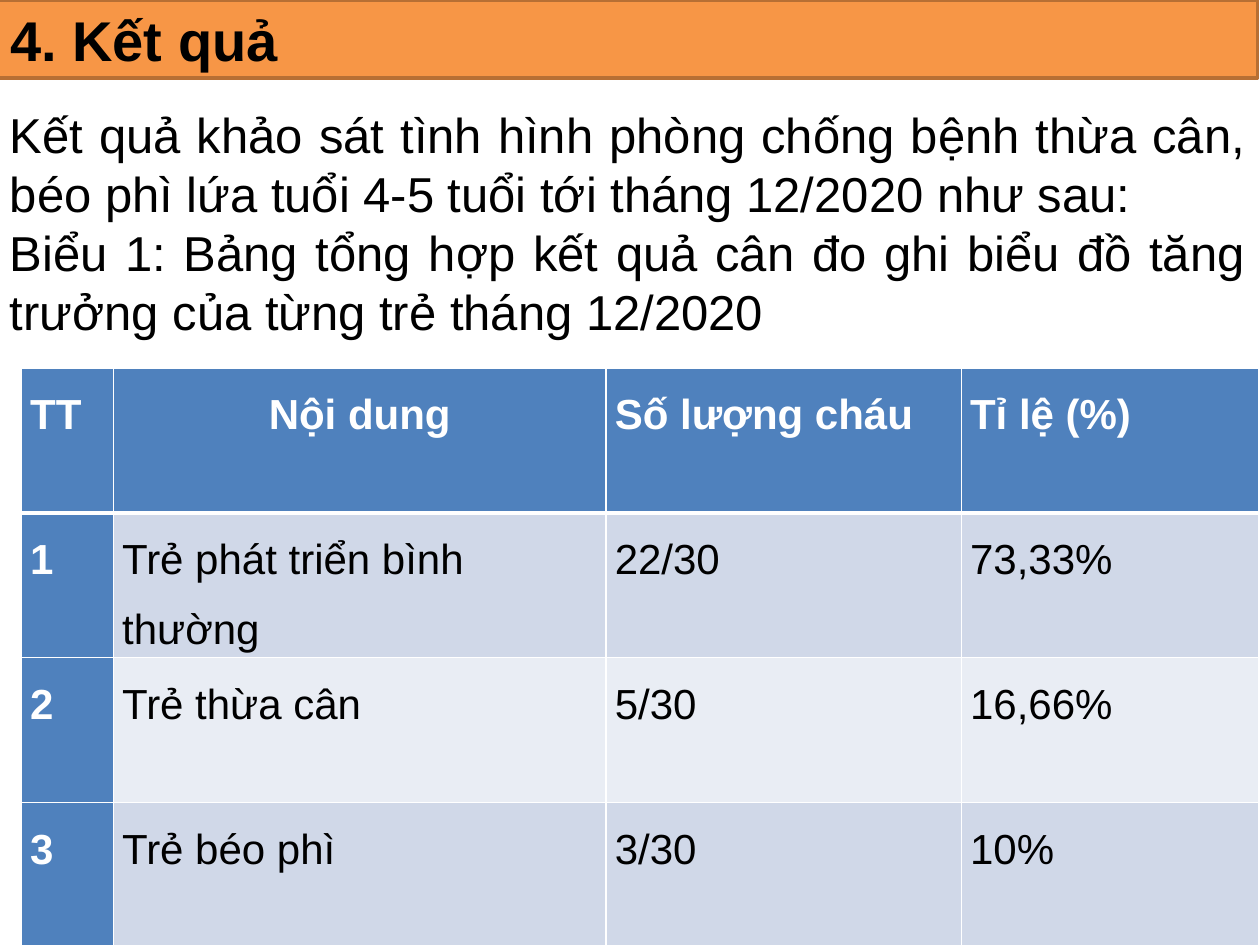
from dataclasses import dataclass

from lxml import etree
from pptx import Presentation, util as u
from pptx.dml.color import RGBColor
from pptx.enum import text
from pptx.oxml import ns

WHITE, BLACK, BLUE = "FFFFFF", "000000", "4F81BD"
BANDS = ("D0D8E8", "E9EDF4")
COLUMN_WIDTHS = (0.73, 3.91, 2.82, 2.36)
ROW_HEIGHT = 1.15
CELL_FORMAT = {"margin_left": u.Inches(0.07), "margin_right": u.Inches(0.07),
               "margin_top": 0, "margin_bottom": 0}


@dataclass
class Result:
    number: str
    content: str
    count: str
    rate: str

    def values(self) -> tuple:
        return self.number, self.content, self.count, self.rate


HEADER = Result("TT", "Nội dung", "Số lượng cháu", "Tỉ lệ (%)")
RESULTS = [
    Result("1", "Trẻ phát triển bình thường", "22/30", "73,33%"),
    Result("2", "Trẻ thừa cân", "5/30", "16,66%"),
    Result("3", "Trẻ béo phì", "3/30", "10%"),
]
INTRO = [
    "Kết quả khảo sát tình hình phòng chống bệnh thừa cân, béo phì lứa tuổi 4-5 tuổi "
    "tới tháng 12/2020 như sau:",
    "Biểu 1: Bảng tổng hợp kết quả cân đo ghi biểu đồ tăng trưởng của từng trẻ "
    "tháng 12/2020",
]


def color(value: str) -> RGBColor:
    return RGBColor.from_string(value)


def apply(target, values: dict) -> None:
    """Set each attribute of target named in values."""
    for name, value in values.items():
        setattr(target, name, value)


def fill(target, value: str) -> None:
    target.fill.solid()
    target.fill.fore_color.rgb = color(value)


def write(para, words: str, size: int, ink: str = BLACK, bold: bool = False, **layout) -> None:
    apply(para, layout)
    span = para.add_run()
    span.text = words
    apply(span.font, {"name": "Arial", "size": u.Pt(size), "bold": bold})
    span.font.color.rgb = color(ink)


def add_borders(cell, widths: dict) -> None:
    """Draw white cell borders; must run before the cell gets its fill."""
    properties = cell._tc.get_or_add_tcPr()
    for side, width in widths.items():
        line = etree.SubElement(properties, ns.qn(f"a:ln{side}"), w=str(u.Pt(width)))
        solid = etree.SubElement(line, ns.qn("a:solidFill"))
        etree.SubElement(solid, ns.qn("a:srgbClr"), val=WHITE)


def add_title(page) -> None:
    bar = page.shapes.title
    apply(bar, {"left": u.Inches(-0.02), "top": 0,
                "width": u.Inches(10), "height": u.Inches(0.62)})
    fill(bar, "F79646")
    bar.line.color.rgb = color("B76F34")
    bar.line.width = u.Pt(2)
    apply(bar.text_frame, {"vertical_anchor": text.MSO_ANCHOR.MIDDLE, "word_wrap": True,
                           "auto_size": text.MSO_AUTO_SIZE.NONE})
    write(bar.text_frame.paragraphs[0], "4. Kết quả", 32, bold=True,
          alignment=text.PP_ALIGN.LEFT)


def add_intro(page) -> None:
    box = page.shapes.add_textbox(u.Inches(-0.02), u.Inches(0.77), u.Inches(10), u.Inches(1.99))
    frame = box.text_frame
    apply(frame, {"word_wrap": True, "vertical_anchor": text.MSO_ANCHOR.MIDDLE,
                  "auto_size": text.MSO_AUTO_SIZE.SHAPE_TO_FIT_TEXT})
    for index, words in enumerate(INTRO):
        para = frame.add_paragraph() if index else frame.paragraphs[0]
        write(para, words, 28, alignment=text.PP_ALIGN.JUSTIFY)


def add_results(page) -> None:
    rows = [HEADER, *RESULTS]
    table = page.shapes.add_table(
        len(rows), len(COLUMN_WIDTHS), u.Inches(0.17), u.Inches(2.92),
        u.Inches(sum(COLUMN_WIDTHS)), u.Inches(ROW_HEIGHT * len(rows))).table
    table.first_col = True
    for column, width in zip(table.columns, COLUMN_WIDTHS):
        column.width = u.Inches(width)
    for r, result in enumerate(rows):
        table.rows[r].height = u.Inches(ROW_HEIGHT)
        for c, words in enumerate(result.values()):
            cell = table.cell(r, c)
            heading = r == 0 or c == 0
            apply(cell, CELL_FORMAT)
            add_borders(cell, {"L": 1, "R": 1, "T": 3 if r == 1 else 1, "B": 3 if r == 0 else 1})
            fill(cell, BLUE if heading else BANDS[(r - 1) % 2])
            centred = r == 0 and c == 1
            write(cell.text_frame.paragraphs[0], words, 24, WHITE if heading else BLACK, heading,
                  alignment=text.PP_ALIGN.CENTER if centred else text.PP_ALIGN.LEFT,
                  line_spacing=1.5, space_after=u.Pt(6))


def main() -> None:
    deck = Presentation()
    apply(deck, {"slide_width": u.Inches(10), "slide_height": u.Inches(7.5)})
    page = deck.slides.add_slide(deck.slide_layouts.get_by_name("Title Only"))
    add_results(page)
    add_intro(page)
    add_title(page)
    deck.save("out.pptx")


if __name__ == "__main__":
    main()
